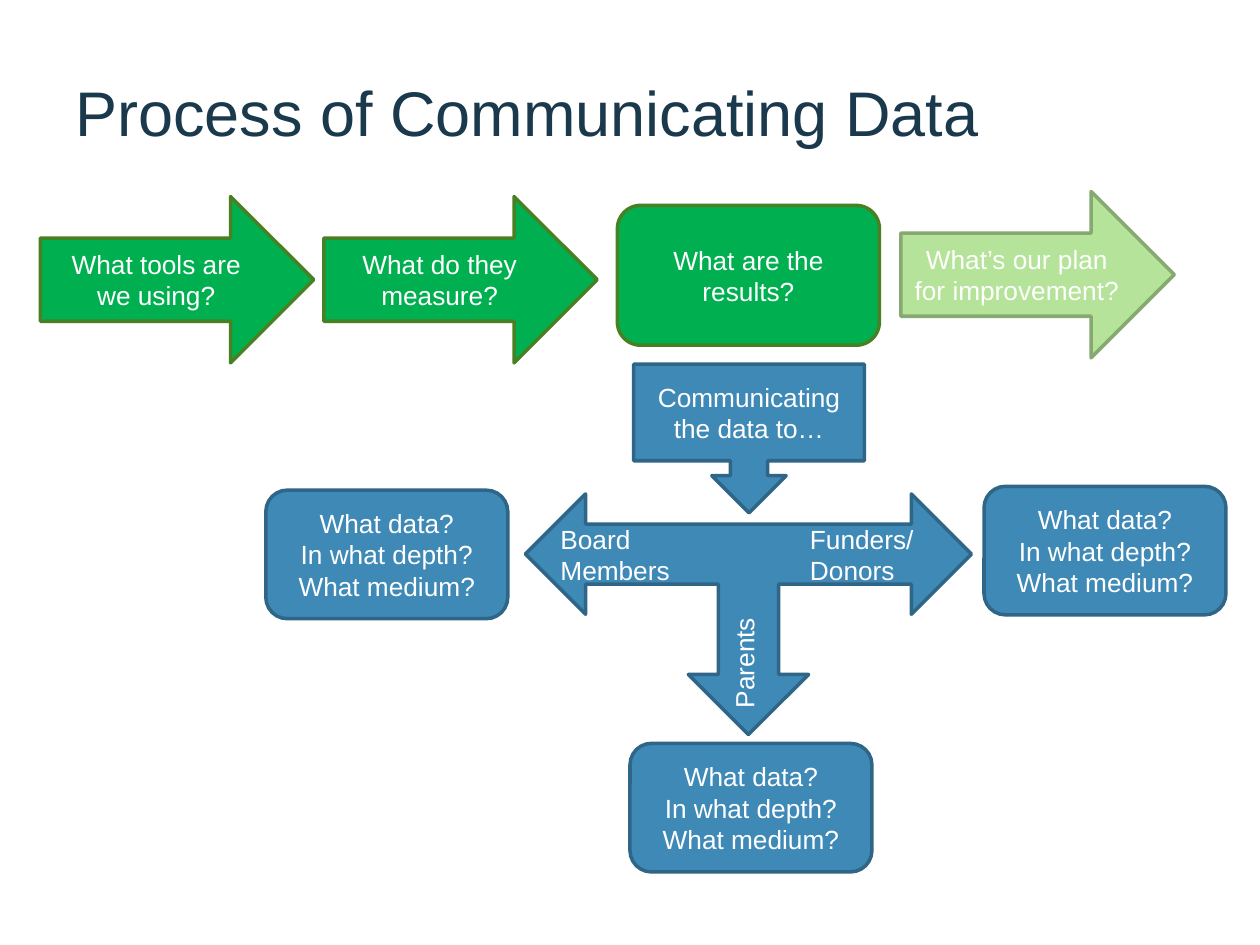
"""Build the slide on the process of communicating data."""
from dataclasses import dataclass

from pptx import Presentation
from pptx.dml.color import RGBColor
from pptx.enum.shapes import MSO_SHAPE
from pptx.enum.text import MSO_ANCHOR, PP_ALIGN
from pptx.util import Pt

PX = 9144


@dataclass(frozen=True)
class Theme:
    font: str = "Arial"
    title_size: int = 36
    body_size: int = 15
    line_width: int = 2
    title: str = "1B394C"
    text: str = "FFFFFF"
    done: tuple = ("00B050", "478123")
    upcoming: tuple = ("B5E399", "86A871")
    audience: tuple = ("3F89B7", "2F6587")


theme = Theme()


def write(shape, text, size=theme.body_size, color=theme.text, align=PP_ALIGN.LEFT):
    text_frame = shape.text_frame
    text_frame.word_wrap = True
    text_frame.text = text
    for paragraph in text_frame.paragraphs:
        paragraph.alignment = align
        for run in paragraph.runs:
            run.font.name = theme.font
            run.font.size = Pt(size)
            run.font.color.rgb = RGBColor.from_string(color)


def add_block(kind, box, colors, text=""):
    shape = slide.shapes.add_shape(kind, *(length * PX for length in box))
    fill, line = colors
    shape.shadow.inherit = False
    shape.fill.solid()
    shape.fill.fore_color.rgb = RGBColor.from_string(fill)
    shape.line.color.rgb = RGBColor.from_string(line)
    shape.line.width = Pt(theme.line_width)
    if text:
        shape.text_frame.vertical_anchor = MSO_ANCHOR.MIDDLE
        write(shape, text, align=PP_ALIGN.CENTER)
    return shape


presentation = Presentation()
presentation.slide_width = 1000 * PX
presentation.slide_height = 750 * PX
slide = presentation.slides.add_slide(presentation.slide_layouts[6])

steps = [
    (MSO_SHAPE.RIGHT_ARROW, (32, 156, 217, 132), theme.done, "What tools are we using?"),
    (MSO_SHAPE.RIGHT_ARROW, (257, 156, 217, 132), theme.done, "What do they measure?"),
    (MSO_SHAPE.ROUNDED_RECTANGLE, (490, 163, 208, 111), theme.done, "What are the results?"),
    (MSO_SHAPE.RIGHT_ARROW, (715, 152, 217, 132), theme.upcoming,
     "What’s our plan for improvement?"),
    (MSO_SHAPE.DOWN_ARROW_CALLOUT, (503, 289, 183, 118), theme.audience,
     "Communicating the data to…"),
]
for step in steps:
    add_block(*step)

audience_arrow = add_block(
    MSO_SHAPE.LEFT_RIGHT_UP_ARROW, (417, 392, 354, 191), theme.audience)
audience_arrow.rotation = 180

audiences = [
    ("Funders/\nDonors", (633, 410, 138, 61), 0),
    ("Board Members", (435, 410, 124, 61), 0),
    ("Parents", (539, 503, 103, 35), 270),
]
for name, box, rotation in audiences:
    label = slide.shapes.add_textbox(*(length * PX for length in box))
    label.rotation = rotation
    write(label, name)

for left, top in [(781, 386), (211, 389), (500, 590)]:
    add_block(MSO_SHAPE.ROUNDED_RECTANGLE, (left, top, 192, 102), theme.audience,
              "What data?\nIn what depth?\nWhat medium?")

title = slide.shapes.add_textbox(50 * PX, 47 * PX, 900 * PX, 125 * PX)
title.text_frame.margin_top = 11 * PX
write(title, "Process of Communicating Data", theme.title_size, theme.title)

presentation.save("out.pptx")
